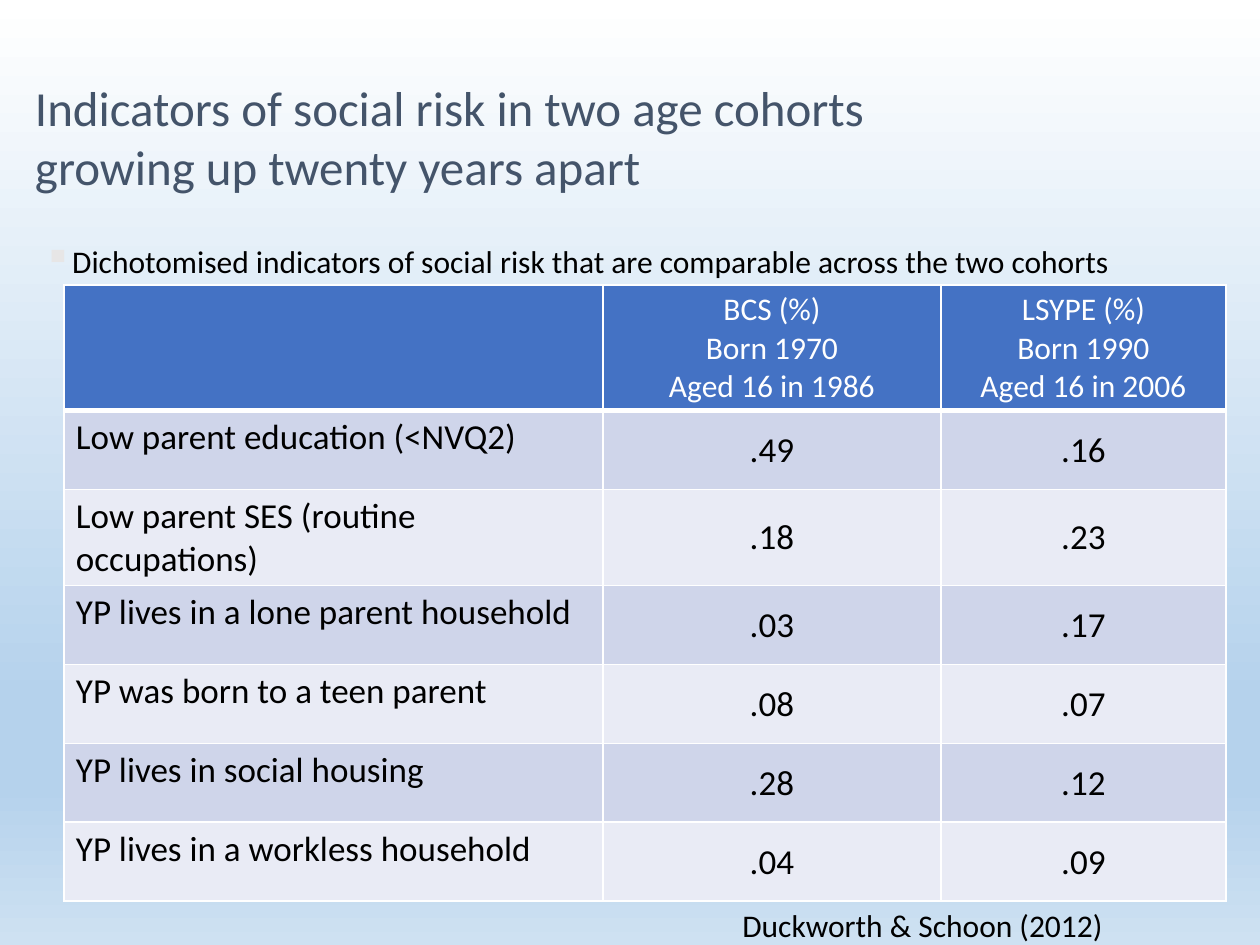
"""Builds a slide comparing social risk indicators in two age cohorts."""
from dataclasses import dataclass, field
from typing import Any

from lxml.etree import SubElement
from pptx import Presentation
from pptx.dml.color import RGBColor
from pptx.enum.text import MSO_ANCHOR as Anchor, MSO_AUTO_SIZE as AutoSize, PP_ALIGN as Align
from pptx.oxml.ns import qn
from pptx.util import Pt

EMU_PER_PX = 914400 / 126
FONT = "Calibri"
COLORS = {
    "title": "44546A", "text": "000000", "bullet": "E7E6E6", "white": "FFFFFF",
    "header": "4472C4", "odd": "CFD5EA", "even": "E9EBF5",
}
SKY = [(0, "FFFFFF"), (74, "B5D2EC"), (83, "B5D2EC"), (100, "CEE1F2")]
COLUMNS = [539, 338, 285]
HEADER_HEIGHT, ROW_HEIGHT = 111, 79
LABEL_INSETS, VALUE_INSETS = (12, 6, 12, 6), (1, 1, 1, 0)
SIDES = ("margin_left", "margin_top", "margin_right", "margin_bottom")


@dataclass
class TextBlock:
    text: str
    box: tuple[int, int, int, int]
    size: int
    color: str = "text"
    frame: dict[str, Any] = field(default_factory=dict)
    paragraph: dict[str, Any] = field(default_factory=dict)
    bullet: str = ""


@dataclass
class Indicator:
    label: str
    bcs: str
    lsype: str


NO_INSETS = dict.fromkeys(SIDES, 0)
BLOCKS = [
    TextBlock("Indicators of social risk in two age cohorts growing up twenty years apart",
              (35, 37, 847, 158), 28, "title",
              NO_INSETS | {"vertical_anchor": Anchor.BOTTOM}, {"line_spacing": Pt(33.3)}),
    TextBlock("Dichotomised indicators of social risk that are comparable across the two cohorts",
              (44, 242, 1171, 572), 18, frame=NO_INSETS,
              paragraph={"space_before": Pt(10.5)}, bullet="▪"),
    TextBlock("Duckworth & Schoon (2012)", (730, 900, 507, 50), 18,
              frame={"auto_size": AutoSize.SHAPE_TO_FIT_TEXT}),
]
HEADINGS = ["", "BCS (%)\nBorn 1970\nAged 16 in 1986", "LSYPE (%)\nBorn 1990\nAged 16 in 2006"]
INDICATORS = [
    Indicator("Low parent education (<NVQ2)", ".49", ".16"),
    Indicator("Low parent SES (routine occupations)", ".18", ".23"),
    Indicator("YP lives in a lone parent household", ".03", ".17"),
    Indicator("YP was born to a teen parent", ".08", ".07"),
    Indicator("YP lives in social housing", ".28", ".12"),
    Indicator("YP lives in a workless household", ".04", ".09"),
]


def px(length: int) -> int:
    return round(length * EMU_PER_PX)


def rgb(name: str) -> RGBColor:
    return RGBColor.from_string(COLORS[name])


def set_all(target: Any, values: dict[str, Any]) -> None:
    for name, value in values.items():
        setattr(target, name, value)


def style_font(font: Any, size: int, color: str) -> None:
    set_all(font, {"name": FONT, "size": Pt(size), "bold": False})
    font.color.rgb = rgb(color)


def paint_sky(slide: Any) -> None:
    fill = slide.background.fill
    fill.gradient()
    fill.gradient_angle = 270
    stops = slide.element.find(".//" + qn("a:gsLst"))
    stops.clear()
    for percent, color in SKY:
        stop = SubElement(stops, qn("a:gs"), pos=str(percent * 1000))
        SubElement(stop, qn("a:srgbClr"), val=color)


def add_bullet(paragraph: Any, mark: str) -> None:
    properties = paragraph._p.get_or_add_pPr()
    properties.set("marL", str(px(28)))
    properties.set("indent", str(px(-28)))
    tint = SubElement(properties, qn("a:buClr"))
    SubElement(tint, qn("a:srgbClr"), val=COLORS["bullet"])
    SubElement(properties, qn("a:buSzPct"), val="120000")
    SubElement(properties, qn("a:buChar"), char=mark)


def add_text(slide: Any, block: TextBlock) -> None:
    frame = slide.shapes.add_textbox(*map(px, block.box)).text_frame
    set_all(frame, {"word_wrap": True} | block.frame)
    paragraph = frame.paragraphs[0]
    set_all(paragraph, block.paragraph)
    if block.bullet:
        add_bullet(paragraph, block.bullet)
    run = paragraph.add_run()
    run.text = block.text
    style_font(run.font, block.size, block.color)


def add_borders(cell: Any, bottom: int) -> None:
    properties = cell._tc.get_or_add_tcPr()
    widths = {"lnL": 1, "lnR": 1, "lnT": 1, "lnB": bottom}
    for index, (side, width) in enumerate(widths.items()):
        line = SubElement(properties, qn(f"a:{side}"), w=str(Pt(width)))
        SubElement(SubElement(line, qn("a:solidFill")), qn("a:srgbClr"), val=COLORS["white"])
        properties.insert(index, line)


def fill_cell(cell: Any, text: str, row: int, column: int) -> None:
    is_header = row == 0
    is_value = not is_header and column > 0
    cell.text = text
    cell.fill.solid()
    cell.fill.fore_color.rgb = rgb("header" if is_header else "odd" if row % 2 else "even")
    insets = VALUE_INSETS if is_value else LABEL_INSETS
    set_all(cell, dict(zip(SIDES, map(px, insets))))
    cell.vertical_anchor = Anchor.MIDDLE if is_value else Anchor.TOP
    for paragraph in cell.text_frame.paragraphs:
        paragraph.alignment = Align.CENTER if column else Align.LEFT
        for run in paragraph.runs:
            style_font(run.font, 18 if is_header else 20, "white" if is_header else "text")
    add_borders(cell, 3 if is_header else 1)


def add_risk_table(slide: Any) -> None:
    rows = [HEADINGS] + [[item.label, item.bcs, item.lsype] for item in INDICATORS]
    heights = [HEADER_HEIGHT] + [ROW_HEIGHT] * len(INDICATORS)
    box = (64, 285, sum(COLUMNS), sum(heights))
    risks = slide.shapes.add_table(len(rows), len(COLUMNS), *map(px, box)).table
    for column, width in zip(risks.columns, COLUMNS):
        column.width = px(width)
    for row, height in zip(risks.rows, heights):
        row.height = px(height)
    for r, texts in enumerate(rows):
        for c, text in enumerate(texts):
            fill_cell(risks.cell(r, c), text, r, c)


def main() -> None:
    deck = Presentation()
    set_all(deck, {"slide_width": px(1260), "slide_height": px(945)})
    slide = deck.slides.add_slide(deck.slide_layouts[6])
    paint_sky(slide)
    title, summary, citation = BLOCKS
    add_text(slide, title)
    add_text(slide, summary)
    add_risk_table(slide)
    add_text(slide, citation)
    deck.save("out.pptx")


if __name__ == "__main__":
    main()
